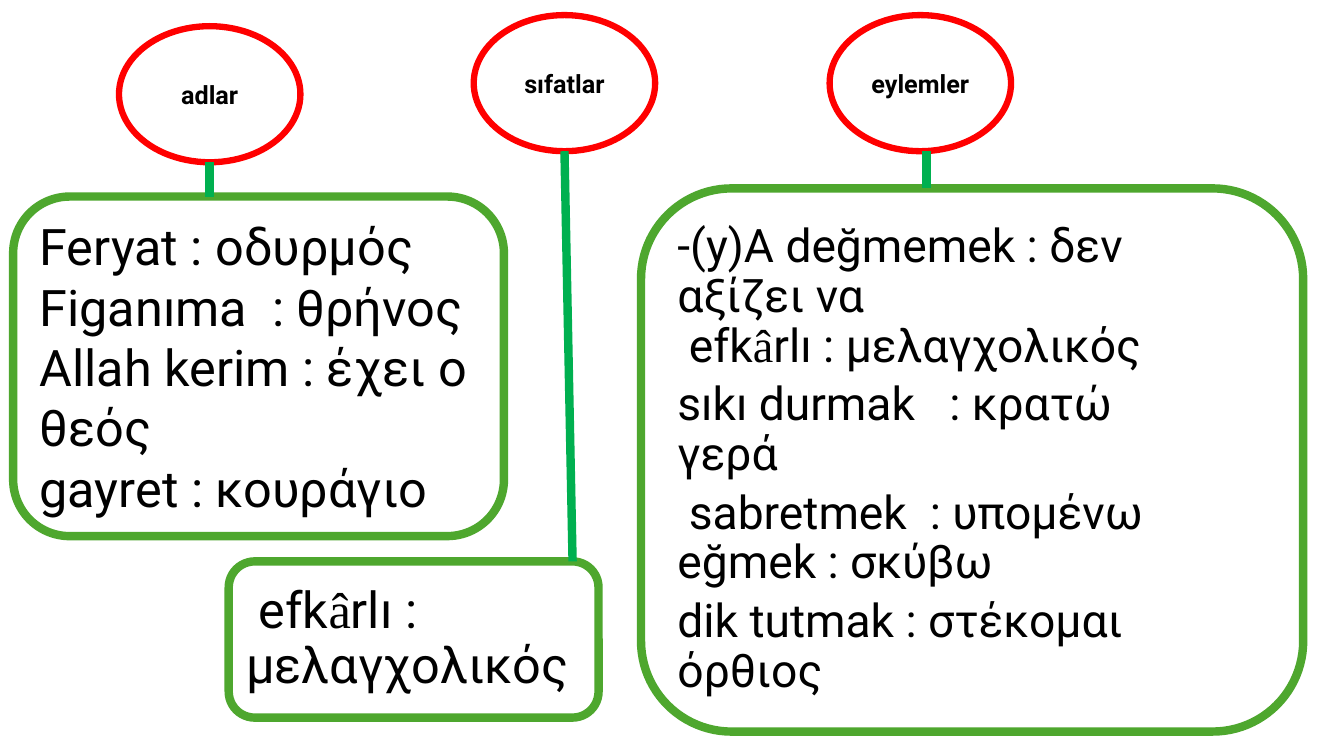
from itertools import groupby

from lxml.etree import SubElement
from pptx import Presentation
from pptx.dml.color import RGBColor
from pptx.enum.shapes import MSO_CONNECTOR as CONNECTOR, MSO_SHAPE as SHAPE
from pptx.enum.text import MSO_ANCHOR as ANCHOR, PP_ALIGN as ALIGN
from pptx.oxml.ns import qn
from pptx.util import Pt

COLORS = {"paper": "FFFFFF", "ink": "000000", "bubble": "FF0000",
          "card": "4EA72E", "stem": "00B050"}
FONT, CIRCUMFLEX_FONT = "Roboto", "Times New Roman"
BUBBLE_WIDTH, BUBBLE_HEIGHT = 129.6, 97.2

# Each card paragraph is a list of its lines.
NOUNS = [
    ["Feryat : οδυρμός", "Figanıma  : θρήνος"],
    ["Allah kerim : έχει ο θεός"],
    ["gayret : κουράγιο"],
]
ADJECTIVES = [[" efkârlı : μελαγχολικός"]]
VERBS = [
    ["-(y)A değmemek : δεν αξίζει να", " efkârlı : μελαγχολικός"],
    ["sıkı durmak   : κρατώ γερά"],
    [" sabretmek  : υπομένω", "eğmek : σκύβω"],
    ["dik tutmak : στέκομαι όρθιος"],
]


def rgb(name):
    return RGBColor.from_string(COLORS[name])


def add_outlined(slide, kind, box, color, weight):
    shape = slide.shapes.add_shape(kind, *(Pt(v) for v in box))
    shape.shadow.inherit = False
    shape.fill.solid()
    shape.fill.fore_color.rgb = rgb("paper")
    shape.line.color.rgb = rgb(color)
    shape.line.width = Pt(weight)
    shape.text_frame.word_wrap = True
    shape.text_frame.vertical_anchor = ANCHOR.MIDDLE
    return shape


def add_run(paragraph, text, size, font=FONT, bold=False):
    run = paragraph.add_run()
    run.text = text
    run.font.size, run.font.name, run.font.bold = Pt(size), font, bold
    run.font.color.rgb = rgb("ink")


def add_bubble(slide, left, top, word):
    bubble = add_outlined(slide, SHAPE.OVAL,
                          (left, top, BUBBLE_WIDTH, BUBBLE_HEIGHT), "bubble", 4.5)
    label = bubble.text_frame.paragraphs[0]
    label.alignment = ALIGN.CENTER
    add_run(label, word, 18, bold=True)


def add_card(slide, box, entries, tight, size, right_margin):
    frame = add_outlined(slide, SHAPE.ROUNDED_RECTANGLE, box, "card", 6).text_frame
    frame.margin_right = Pt(right_margin)
    for number, lines in enumerate(entries):
        entry = frame.add_paragraph() if number else frame.paragraphs[0]
        entry.alignment = ALIGN.LEFT
        if tight:
            entry.line_spacing, entry.space_after = 0.9, Pt(6)
        for row, line in enumerate(lines):
            if row:
                entry.add_line_break()
            for circumflex, letters in groupby(line, lambda letter: letter == "â"):
                add_run(entry, "".join(letters), size,
                        CIRCUMFLEX_FONT if circumflex else FONT)


def add_stem(slide, start, end):
    stem = slide.shapes.add_connector(CONNECTOR.STRAIGHT,
                                      *(Pt(v) for v in (*start, *end)))
    stem.line.color.rgb = rgb("stem")
    stem.line.width = Pt(6)
    SubElement(stem._element.spPr, qn("a:effectLst"))


def add_word_class(slide, word, bubble_at, card_box, entries, stem_shift=0,
                   stem_lean=0, tight=True, size=36, right_margin=7.2):
    """Draw a bubble, its card and the stem between them."""
    left, top = bubble_at
    add_card(slide, card_box, entries, tight, size, right_margin)
    add_bubble(slide, left, top, word)
    stem_x = left + BUBBLE_WIDTH / 2 + stem_shift
    add_stem(slide, (stem_x, top + BUBBLE_HEIGHT),
             (stem_x + stem_lean, card_box[1]))


def main():
    deck = Presentation()
    deck.slide_width, deck.slide_height = Pt(960), Pt(540)
    slide = deck.slides.add_slide(deck.slide_layouts[6])
    add_word_class(slide, "adlar", (85, 18.7), (9.4, 140.4, 350.6, 242.6),
                   NOUNS, tight=False)
    add_word_class(slide, "eylemler", (592.6, 10.8), (457.9, 134.6, 473, 388),
                   VERBS, stem_shift=4.5, size=33, right_margin=67)
    add_word_class(slide, "sıfatlar", (338.4, 10.8), (163.4, 401, 264.2, 111.6),
                   ADJECTIVES, stem_lean=5.8)
    deck.save("out.pptx")


if __name__ == "__main__":
    main()
